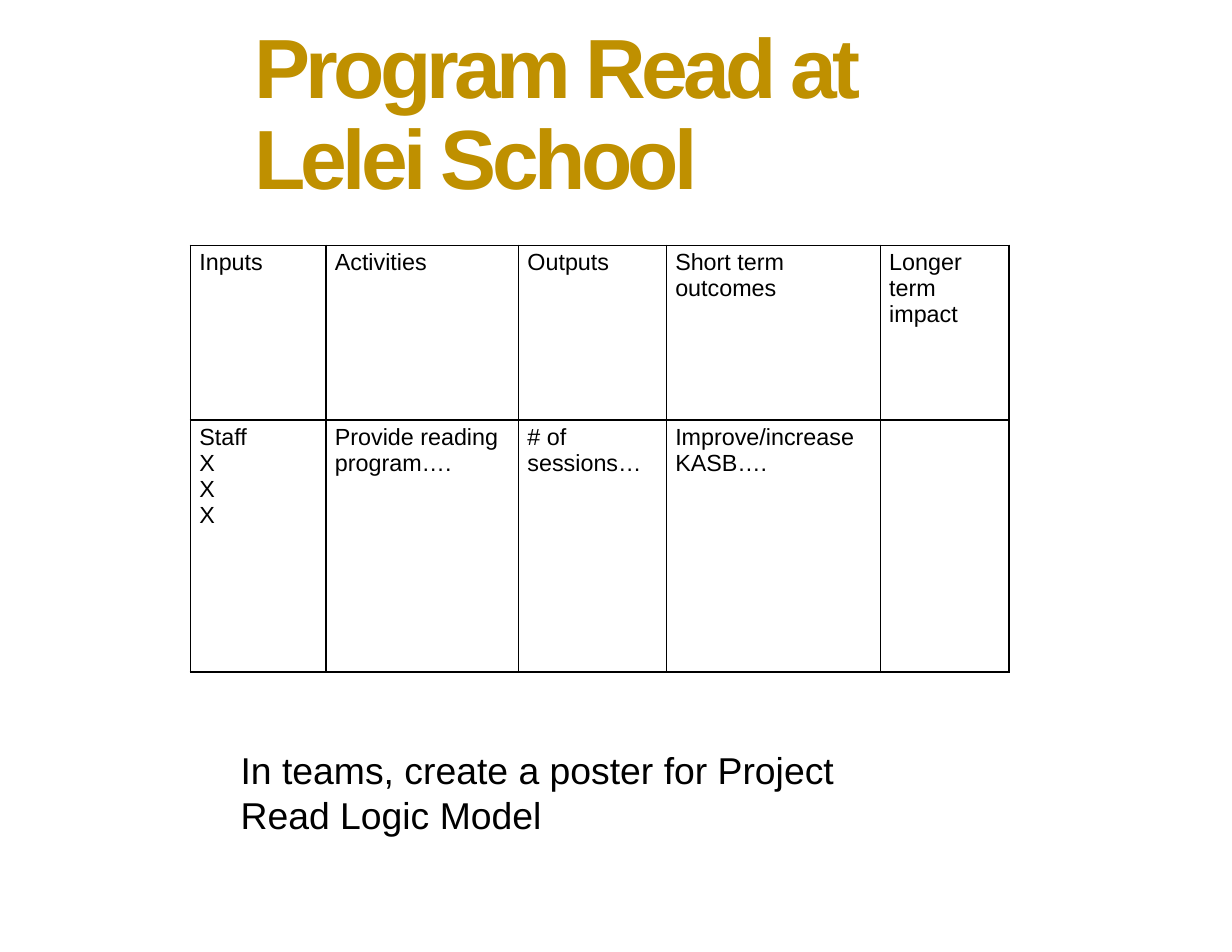
from lxml.etree import SubElement
from pptx import Presentation
from pptx.dml.color import RGBColor
from pptx.enum.text import MSO_ANCHOR, MSO_AUTO_SIZE, PP_ALIGN
from pptx.oxml.ns import qn
from pptx.util import Inches, Pt

GOLD = RGBColor(0xBF, 0x90, 0x00)
BLACK = RGBColor(0x00, 0x00, 0x00)
WHITE = RGBColor(0xFF, 0xFF, 0xFF)

COLUMN_WIDTHS = [1.21, 1.72, 1.32, 1.91, 1.15]
ROW_HEIGHTS = [1.56, 2.25]
LOGIC_MODEL = [
    ["Inputs", "Activities", "Outputs", "Short term outcomes", "Longer term impact"],
    ["Staff\nX\nX\nX", "Provide reading program….", "# of sessions…",
     "Improve/increase KASB….", ""],
]


class SlideBuilder:
    font_name = "Arial"
    margin_x = Inches(0.08)
    margin_y = Inches(0.04)

    def __init__(self, slide):
        self.slide = slide
        slide.background.fill.solid()
        slide.background.fill.fore_color.rgb = WHITE

    def add_lines(self, text_frame, text, size, color=BLACK, bold=False):
        """Fill the frame with one paragraph per line and return the runs."""
        runs = []
        for index, line in enumerate(text.split("\n")):
            paragraph = text_frame.paragraphs[0] if index == 0 else text_frame.add_paragraph()
            paragraph.alignment = PP_ALIGN.LEFT
            run = paragraph.add_run()
            run.text = line
            run.font.name = self.font_name
            run.font.size = Pt(size)
            run.font.bold = bold
            run.font.color.rgb = color
            runs.append(run)
        return runs

    def set_margins(self, target):
        target.margin_left = target.margin_right = self.margin_x
        target.margin_top = target.margin_bottom = self.margin_y

    def place(self, shape, left, top, width, height):
        shape.left, shape.top = Inches(left), Inches(top)
        shape.width, shape.height = Inches(width), Inches(height)

    def title(self, text, box):
        title = self.slide.shapes.title
        self.place(title, *box)
        frame = title.text_frame
        frame.word_wrap = True
        frame.auto_size = MSO_AUTO_SIZE.NONE
        frame.vertical_anchor = MSO_ANCHOR.MIDDLE
        self.set_margins(frame)
        for run in self.add_lines(frame, text, 54, GOLD, bold=True):
            run._r.get_or_add_rPr().set("spc", "-300")
        frame.paragraphs[0].line_spacing = 0.9

    def text(self, text, box, size):
        frame = self.slide.shapes.add_textbox(*map(Inches, box)).text_frame
        frame.word_wrap = True
        frame.auto_size = MSO_AUTO_SIZE.SHAPE_TO_FIT_TEXT
        self.add_lines(frame, text, size)

    def border(self, cell, width=1):
        properties = cell._tc.get_or_add_tcPr()
        for index, side in enumerate(("lnL", "lnR", "lnT", "lnB")):
            line = SubElement(properties, qn(f"a:{side}"), w=str(Pt(width)))
            fill = SubElement(line, qn("a:solidFill"))
            SubElement(fill, qn("a:srgbClr"), val=str(BLACK))
            properties.insert(index, line)

    def table(self, rows, left, top, widths, heights, size):
        box = (left, top, sum(widths), sum(heights))
        table = self.slide.shapes.add_table(
            len(heights), len(widths), *map(Inches, box)).table
        table.first_row = table.horz_banding = False
        for column, width in zip(table.columns, widths):
            column.width = Inches(width)
        for row, height, texts in zip(table.rows, heights, rows):
            row.height = Inches(height)
            for cell, text in zip(row.cells, texts):
                self.set_margins(cell)
                cell.fill.background()
                self.border(cell)
                if text:
                    self.add_lines(cell.text_frame, text, size)


def main():
    presentation = Presentation()
    presentation.slide_width = Inches(11)
    presentation.slide_height = Inches(8.5)
    title_only = presentation.slide_layouts[5]
    builder = SlideBuilder(presentation.slides.add_slide(title_only))

    builder.title("Program Read at Lelei School", (2.19, 0.53, 6.53, 1.03))
    builder.table(LOGIC_MODEL, 1.7, 2.19, COLUMN_WIDTHS, ROW_HEIGHTS, 15)
    builder.text("In teams, create a poster for Project Read Logic Model",
                 (2.05, 6.62, 5.77, 0.91), 24)
    presentation.save("out.pptx")


if __name__ == "__main__":
    main()
